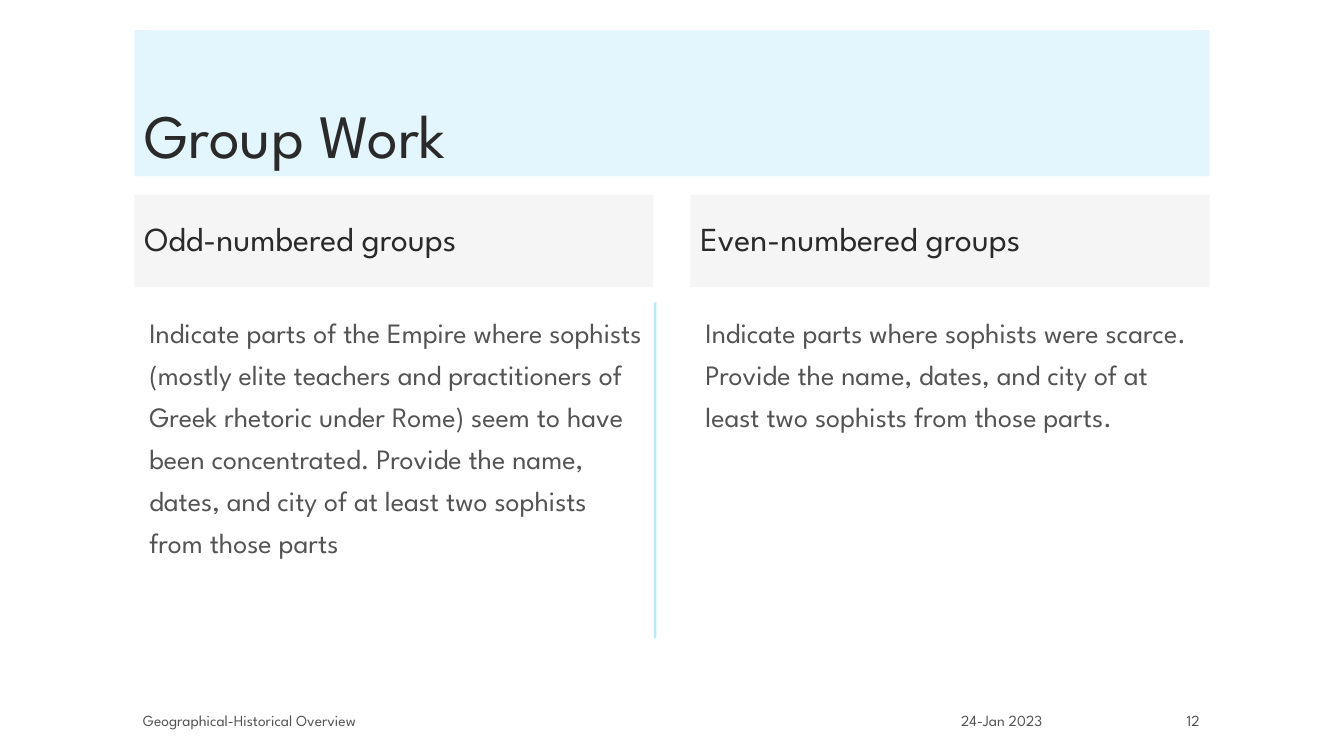
from lxml import etree
from pptx import Presentation
from pptx.dml.color import RGBColor
from pptx.enum.shapes import MSO_CONNECTOR, MSO_SHAPE
from pptx.enum.text import MSO_ANCHOR, PP_ALIGN
from pptx.oxml.ns import qn
from pptx.util import Inches, Pt

RECT = MSO_SHAPE.RECTANGLE
LINE = MSO_CONNECTOR.STRAIGHT
TOP, MIDDLE, BOTTOM = MSO_ANCHOR.TOP, MSO_ANCHOR.MIDDLE, MSO_ANCHOR.BOTTOM
LEFT, RIGHT = PP_ALIGN.LEFT, PP_ALIGN.RIGHT


def shade(code):
    """Turn a hex string into a colour."""
    return RGBColor.from_string(code)


class Deck:
    """A slide on a grid of 80 columns and 150 rows."""

    FONT = "League Spartan"
    DARK, GRAY = "2A2A2A", "545454"
    BLUE, SILVER = "00B0F0", "BFBFBF"
    COLS, ROWS = 80, 150

    def __init__(self):
        self.file = Presentation()
        self.file.slide_width = Inches(13.33)
        self.file.slide_height = Inches(7.5)
        self.slide = self.file.slides.add_slide(self.file.slide_layouts[6])
        self.col = self.file.slide_width / self.COLS
        self.row = self.file.slide_height / self.ROWS

    def place(self, x, y, w, h):
        """Turn grid units into slide lengths."""
        return (round(x * self.col), round(y * self.row),
                round(w * self.col), round(h * self.row))

    def tint(self, item, fill, code, alpha):
        """Fill with a hex colour at an opacity in percent."""
        fill.solid()
        fill.fore_color.rgb = shade(code)
        for node in item._element.spPr.iter(qn("a:srgbClr")):
            etree.SubElement(node, qn("a:alpha"), val=str(alpha * 1000))

    def label(self, item, text, size, code, anchor, align=LEFT, lead=1.0):
        """Put one styled run into a shape and return its paragraph."""
        frame = item.text_frame
        frame.word_wrap = True
        frame.vertical_anchor = anchor
        par = frame.paragraphs[0]
        par.alignment = align
        par.line_spacing = lead
        run = par.add_run()
        run.text = text
        run.font.name = self.FONT
        run.font.size = Pt(size)
        run.font.color.rgb = shade(code)
        return par

    def band(self, box, text, size, code, alpha, anchor):
        """Add a heading on a translucent rectangle."""
        item = self.slide.shapes.add_shape(RECT, *self.place(*box))
        item.shadow.inherit = False
        item.line.fill.background()
        self.tint(item, item.fill, code, alpha)
        self.label(item, text, size, self.DARK, anchor, lead=0.9)

    def body(self, box, text):
        item = self.slide.shapes.add_textbox(*self.place(*box))
        par = self.label(item, text, 20, self.GRAY, TOP, lead=1.25)
        par.space_before = Pt(18)
        props = par._p.get_or_add_pPr()
        props.set("marL", str(Inches(0.05)))
        props.set("indent", "0")

    def foot(self, x, w, text, align):
        item = self.slide.shapes.add_textbox(*self.place(x, 141, w, 4))
        self.label(item, text, 11, self.GRAY, MIDDLE, align)

    def rule(self, x, top, end):
        """Add a pale vertical line."""
        x, top, _, end = self.place(x, top, 0, end)
        item = self.slide.shapes.add_connector(LINE, x, top, x, end)
        item.line.width = Pt(1.75)
        self.tint(item, item.line.fill, self.BLUE, 15)
        etree.SubElement(item._element.spPr, qn("a:effectLst"))


GROUPS = [
    ("Odd-numbered groups",
     "Indicate parts of the Empire where sophists (mostly elite teachers and "
     "practitioners of Greek rhetoric under Rome) seem to have been "
     "concentrated. Provide the name, dates, and city of at least two "
     "sophists from those parts"),
    ("Even-numbered groups",
     "Indicate parts where sophists were scarce. Provide the name, dates, and "
     "city of at least two sophists from those parts."),
]
FEET = [
    (53.46, 9.18, "24-Jan 2023", RIGHT),
    (7.92, 43.56, "Geographical-Historical Overview", LEFT),
    (64.5, 7.5, "12", RIGHT),
]
EDGE, SPAN, WIDE = 8, 64, 30.9


def main():
    deck = Deck()
    for _ in range(2):
        deck.rule(39, 60, 126.6)
    deck.band((EDGE, 6, SPAN, 29), "Group Work", 44, deck.BLUE, 11, BOTTOM)
    for i, (head, text) in enumerate(GROUPS):
        x = EDGE + i * (SPAN - WIDE)
        deck.band((x, 38.6, WIDE, 18.4), head, 24, deck.SILVER, 15, MIDDLE)
        deck.body((x, 60, WIDE, 75), text)
    for foot in FEET:
        deck.foot(*foot)
    deck.file.save("out.pptx")


if __name__ == "__main__":
    main()
